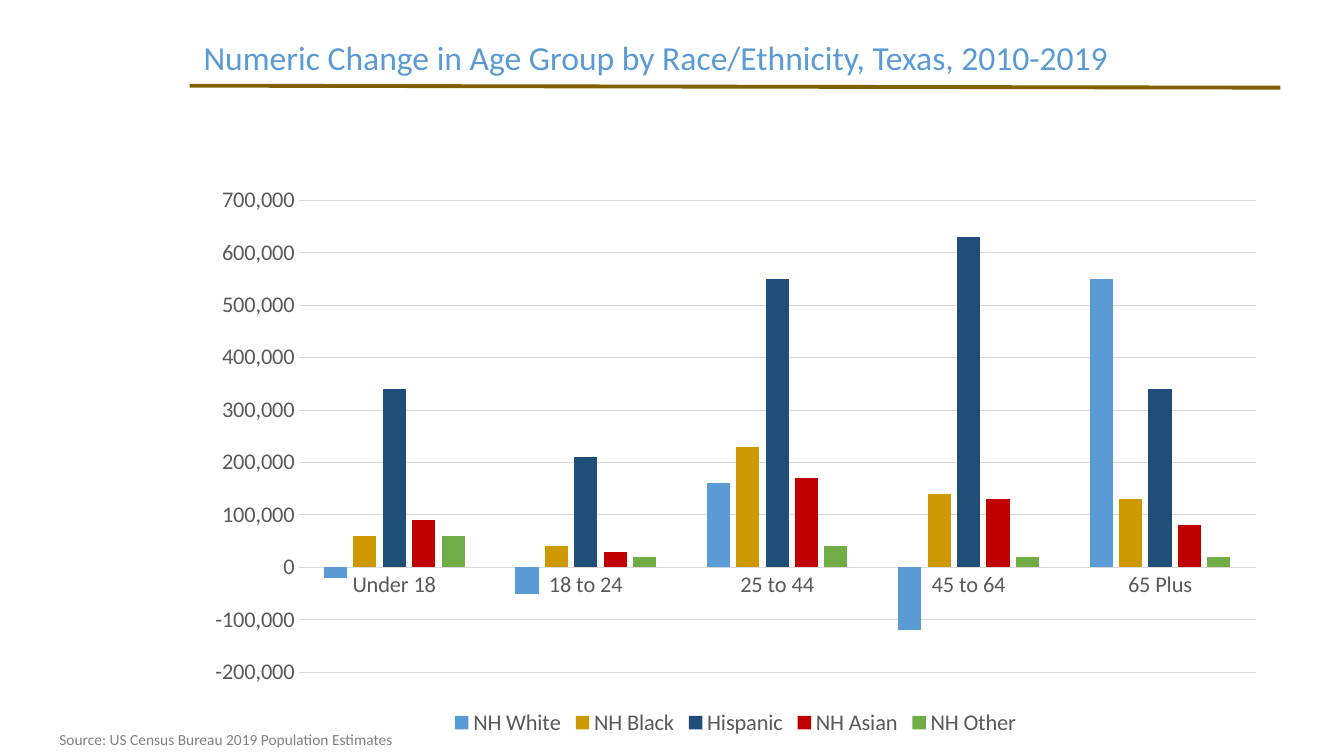
"""Build a slide charting Texas population change by age group and race/ethnicity."""
import pptx
import pptx.chart.data
import pptx.dml.color
import pptx.enum.chart
import pptx.enum.shapes
import pptx.enum.text
import pptx.oxml
import pptx.util
from pptx.util import Inches

COLORS = {
    "title": "5B9BD5", "rule": "806000", "source": "808080",
    "label": "595959", "grid": "D9D9D9",
    "NH White": "5B9BD5", "NH Black": "CC9900", "Hispanic": "1F4E79",
    "NH Asian": "C00000", "NH Other": "70AD47",
}
AGE_GROUPS = ["Under 18", "18 to 24", "25 to 44", "45 to 64", "65 Plus"]
CHANGES = {
    "NH White": [-20000, -50000, 160000, -120000, 550000],
    "NH Black": [60000, 40000, 230000, 140000, 130000],
    "Hispanic": [340000, 210000, 550000, 630000, 340000],
    "NH Asian": [90000, 30000, 170000, 130000, 80000],
    "NH Other": [60000, 20000, 40000, 20000, 20000],
}


def color(name):
    return pptx.dml.color.RGBColor.from_string(COLORS[name])


def add_text(text, left, top, width, height, size, tint, anchor, spacing=1.0):
    box = page.shapes.add_textbox(Inches(left), Inches(top), Inches(width), Inches(height))
    box.text_frame.word_wrap = True
    box.text_frame.vertical_anchor = anchor
    para = box.text_frame.paragraphs[0]
    para.line_spacing = spacing
    span = para.add_run()
    span.text = text
    span.font.name = "Calibri"
    span.font.size = pptx.util.Pt(size)
    span.font.color.rgb = color(tint)


deck = pptx.Presentation()
deck.slide_width = Inches(13.33)
deck.slide_height = Inches(7.5)
page = deck.slides.add_slide(deck.slide_layouts[6])

rule = page.shapes.add_connector(
    pptx.enum.shapes.MSO_CONNECTOR.STRAIGHT,
    Inches(1.88), Inches(0.85), Inches(12.7), Inches(0.87))
rule.line.color.rgb = color("rule")
rule.line.width = pptx.util.Pt(2.75)
rule._element.spPr.append(pptx.oxml.parse_xml(
    '<a:effectLst xmlns:a="http://schemas.openxmlformats.org/drawingml/2006/main"/>'))

data = pptx.chart.data.CategoryChartData(number_format="#,##0")
data.categories = AGE_GROUPS
for group, values in CHANGES.items():
    data.add_series(group, values)
chart = page.shapes.add_chart(
    pptx.enum.chart.XL_CHART_TYPE.COLUMN_CLUSTERED,
    Inches(1.92), Inches(1.74), Inches(10.75), Inches(5.61), data).chart
chart.has_title = False
chart.font.name = "Calibri"
chart.font.size = pptx.util.Pt(16)
chart.font.color.rgb = color("label")

chart.has_legend = True
chart.legend.position = pptx.enum.chart.XL_LEGEND_POSITION.BOTTOM
chart.legend.include_in_layout = False

plot = chart.plots[0]
plot.gap_width = 219
plot.overlap = -27
plot.vary_by_categories = False
for series in plot.series:
    series.invert_if_negative = False
    series.format.fill.solid()
    series.format.fill.fore_color.rgb = color(series.name)

ages = chart.category_axis
amounts = chart.value_axis
for axis in (ages, amounts):
    axis.major_tick_mark = pptx.enum.chart.XL_TICK_MARK.NONE
    axis.minor_tick_mark = pptx.enum.chart.XL_TICK_MARK.NONE
amounts.minimum_scale = -200000
amounts.maximum_scale = 700000
amounts.major_unit = 100000
amounts.tick_labels.number_format = "#,##0"
amounts.tick_labels.number_format_is_linked = False
amounts.format.line.fill.background()
for line in (ages.format.line, amounts.major_gridlines.format.line):
    line.color.rgb = color("grid")
    line.width = pptx.util.Pt(0.75)

add_text("Numeric Change in Age Group by Race/Ethnicity, Texas, 2010-2019",
         left=1.92, top=0.34, width=10.75, height=0.5, size=24, tint="title",
         anchor=pptx.enum.text.MSO_ANCHOR.MIDDLE, spacing=0.9)
add_text("Source: US Census Bureau 2019 Population Estimates",
         left=0.49, top=7.19, width=8.75, height=0.29, size=11, tint="source",
         anchor=pptx.enum.text.MSO_ANCHOR.TOP)

deck.save("out.pptx")
